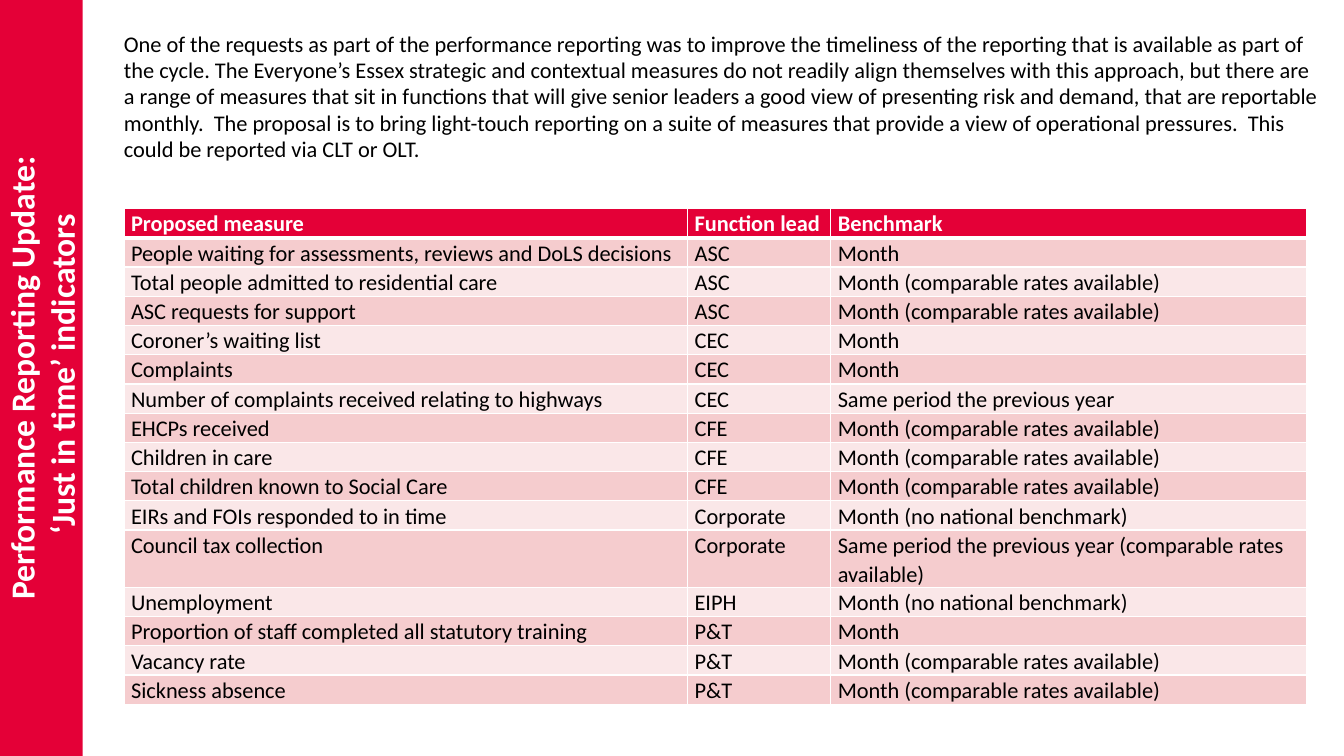
from pptx import Presentation
from pptx.dml.color import RGBColor
from pptx.enum import shapes, text
from pptx.oxml import parse_xml
from pptx.oxml.ns import nsdecls
from pptx.util import Inches, Pt

# Content
TITLE = ["Performance Reporting Update:", " ‘Just in time’ indicators"]
INTRO = (
    "One of the requests as part of the performance reporting was to improve the "
    "timeliness of the reporting that is available as part of the cycle. The "
    "Everyone’s Essex strategic and contextual measures do not readily align "
    "themselves with this approach, but there are a range of measures that sit in "
    "functions that will give senior leaders a good view of presenting risk and "
    "demand, that are reportable monthly.  The proposal is to bring light-touch "
    "reporting on a suite of measures that provide a view of operational "
    "pressures.  This could be reported via CLT or OLT."
)
MONTH = "Month"
RATES = "Month (comparable rates available)"
NONE = "Month (no national benchmark)"
YEAR = "Same period the previous year"
ROWS = [
    ("Proposed measure", "Function lead", "Benchmark"),
    ("People waiting for assessments, reviews and DoLS decisions", "ASC", MONTH),
    ("Total people admitted to residential care", "ASC", RATES),
    ("ASC requests for support", "ASC", RATES),
    ("Coroner’s waiting list", "CEC", MONTH),
    ("Complaints", "CEC", MONTH),
    ("Number of complaints received relating to highways", "CEC", YEAR),
    ("EHCPs received", "CFE", RATES),
    ("Children in care", "CFE", RATES),
    ("Total children known to Social Care", "CFE", RATES),
    ("EIRs and FOIs responded to in time", "Corporate", NONE),
    ("Council tax collection", "Corporate", YEAR + " (comparable rates available)"),
    ("Unemployment", "EIPH", NONE),
    ("Proportion of staff completed all statutory training", "P&T", MONTH),
    ("Vacancy rate", "P&T", RATES),
    ("Sickness absence", "P&T", RATES),
]
COLS = [5.59, 1.42, 4.72]
ROW_H = 0.29
LEFT = 1.23
BAR_W = 0.82
WIDE, HIGH = 13.33, 7.5
RED, DARK, PALE = "E40037", "F5CCCE", "FAE7E8"
WHITE, BLACK = "FFFFFF", "000000"


def paint(fill, tone):
    fill.solid()
    fill.fore_color.rgb = RGBColor.from_string(tone)


def style(para, size, tone, bold=False):
    font = para.font
    font.name, font.size, font.bold = "Calibri", Pt(size), bold
    font.color.rgb = RGBColor.from_string(tone)


def inset(box, side):
    box.margin_left = box.margin_right = Inches(side)
    box.margin_top = box.margin_bottom = 0


def edge(cell, low):
    props = cell._tc.get_or_add_tcPr()
    sides = {"lnL": 1, "lnR": 1, "lnT": 1, "lnB": low}
    for spot, (tag, width) in enumerate(sides.items()):
        props.insert(spot, parse_xml(
            f'<a:{tag} {nsdecls("a")} w="{Pt(width)}"><a:solidFill>'
            f'<a:srgbClr val="{WHITE}"/></a:solidFill></a:{tag}>'))


deck = Presentation()
deck.slide_width, deck.slide_height = Inches(WIDE), Inches(HIGH)
slide = deck.slides.add_slide(deck.slide_layouts[6])

# Introduction
intro = slide.shapes.add_textbox(
    Inches(LEFT), Inches(0.31), Inches(11.87), Inches(1.01)).text_frame
intro.word_wrap = True
inset(intro, 0)
para = intro.paragraphs[0]
para.text = INTRO
para.line_spacing = 0.98
style(para, 16, BLACK)

# Table of measures
grid = slide.shapes.add_table(
    len(ROWS), len(COLS), Inches(LEFT), Inches(2.07),
    Inches(sum(COLS)), Inches(ROW_H * len(ROWS))).table
for col, width in zip(grid.columns, COLS):
    col.width = Inches(width)
for r, row in enumerate(ROWS):
    head = r == 0
    tone = RED if head else DARK if r % 2 else PALE
    for c, words in enumerate(row):
        cell = grid.cell(r, c)
        inset(cell, 0.07)
        paint(cell.fill, tone)
        edge(cell, 3 if head else 1)
        para = cell.text_frame.paragraphs[0]
        para.text = words
        para.line_spacing = 1.07
        para.space_after = Pt(8)
        style(para, 16, WHITE if head else BLACK, head)

# Title bar, turned to run up the left side
bar = slide.shapes.add_shape(
    shapes.MSO_SHAPE.RECTANGLE, Inches((BAR_W - HIGH) / 2),
    Inches((HIGH - BAR_W) / 2), Inches(HIGH), Inches(BAR_W))
bar.rotation = 270
bar.shadow.inherit = False
paint(bar.fill, RED)
bar.line.fill.background()
frame = bar.text_frame
frame.word_wrap = True
frame.vertical_anchor = text.MSO_ANCHOR.MIDDLE
inset(frame, 0)
frame.text = "\n".join(TITLE)
for para in frame.paragraphs:
    para.alignment = text.PP_ALIGN.CENTER
    style(para, 24, WHITE, True)

deck.save("out.pptx")
